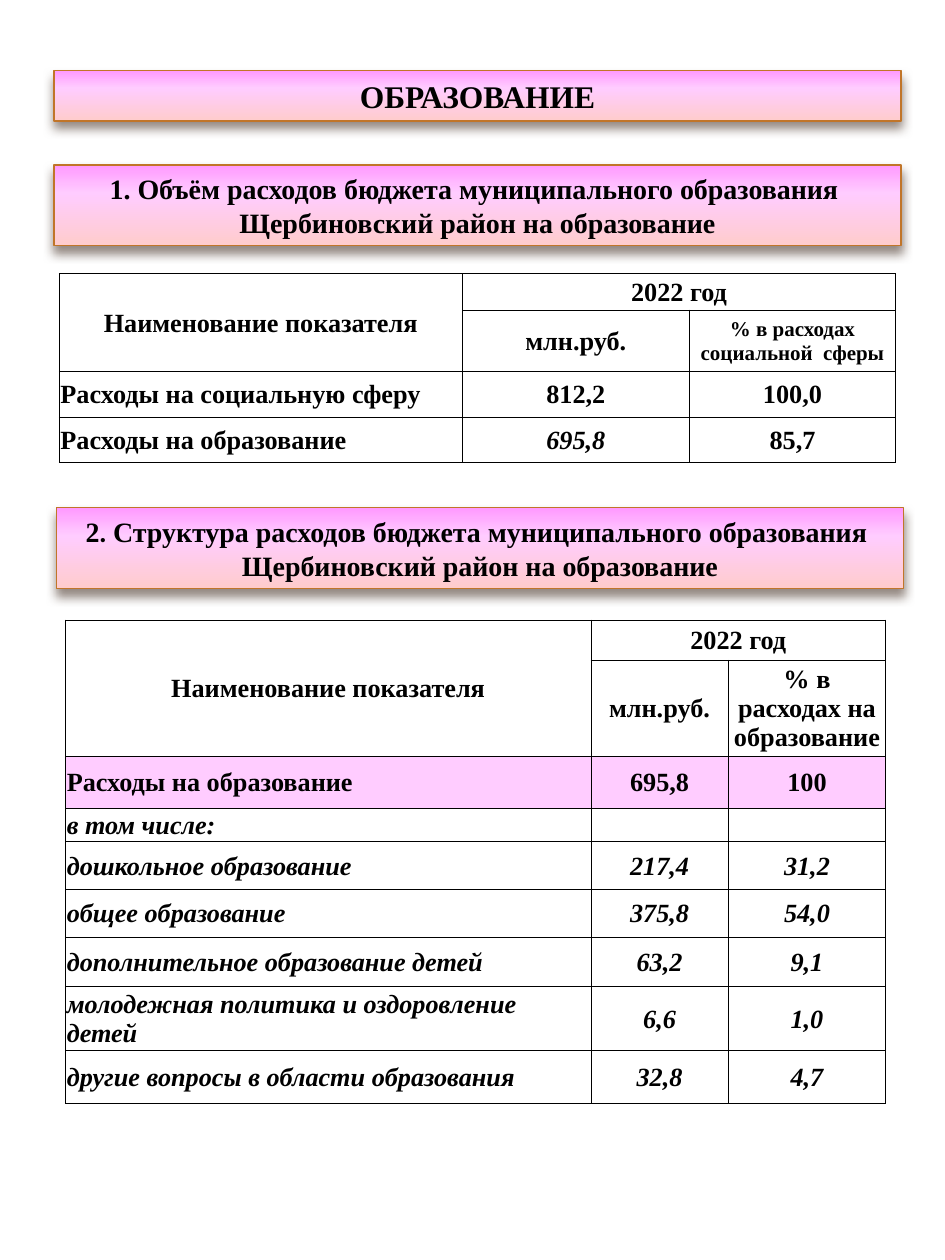
from lxml import etree
from pptx import Presentation
from pptx.dml.color import RGBColor
from pptx.enum.shapes import MSO_SHAPE
from pptx.enum.text import MSO_ANCHOR, MSO_AUTO_SIZE, PP_ALIGN
from pptx.oxml.ns import qn
from pptx.util import Inches, Pt

RECT = MSO_SHAPE.RECTANGLE
MIDDLE = MSO_ANCHOR.MIDDLE
GROW = MSO_AUTO_SIZE.SHAPE_TO_FIT_TEXT
LEFT, CENTER = PP_ALIGN.LEFT, PP_ALIGN.CENTER

SERIF, SANS = "Times New Roman", "Lato"
BLACK, PINK = "000000", "FFCCFF"
STOPS = [(0, "FF99FF"), (35, PINK), (100, "FFCCCC")]
EDGE, SHADE = "C17529", "4E3B30"
BODY = 15
HEAD = "Наименование показателя"
YEAR, UNIT = "2022 год", "млн.руб."
TOTAL = "Расходы на образование"
PLACE = "Щербиновский район на образование"


def color(code):
    return RGBColor.from_string(code)


def node(parent, tag, **attrs):
    return etree.SubElement(parent, qn(tag), {k: str(v) for k, v in attrs.items()})


def add_run(para, text, size, font=SERIF, italic=False):
    run = para.add_run()
    run.text = text
    run.font.name = font
    run.font.size = Pt(size)
    run.font.bold = True
    run.font.italic = italic
    run.font.color.rgb = color(BLACK)


def add_lines(para, lines, size):
    """Write lines of (text, font) runs, with a line break between them."""
    for index, line in enumerate(lines):
        if index:
            para.add_line_break()
        for text, font in line:
            add_run(para, text, size, font)


def shade(shape):
    """Give a shape a soft shadow straight below it."""
    effects = node(shape._element.spPr, "a:effectLst")
    outer = node(effects, "a:outerShdw", blurRad=Pt(6), dist=Pt(4),
                 dir=5400000, rotWithShape=0)
    tint = node(outer, "a:srgbClr", val=SHADE)
    node(tint, "a:alpha", val=60000)


def add_banner(slide, left, top, height, lines, size):
    shape = slide.shapes.add_shape(RECT, Inches(left), Inches(top),
                                   Inches(6.72), Inches(height))
    shape.fill.gradient()
    shape.fill.gradient_angle = 270
    stops = shape._element.spPr.find(".//" + qn("a:gsLst"))
    for old in list(stops):
        stops.remove(old)
    for place, code in STOPS:
        stop = node(stops, "a:gs", pos=place * 1000)
        node(stop, "a:srgbClr", val=code)
    shape.line.color.rgb = color(EDGE)
    shape.line.width = Pt(0.79)
    shade(shape)
    frame = shape.text_frame
    frame.word_wrap = True
    frame.auto_size = GROW
    para = frame.paragraphs[0]
    para.alignment = CENTER
    add_lines(para, lines, size)


def add_edges(cell):
    props = cell._tc.get_or_add_tcPr()
    for index, side in enumerate(("a:lnL", "a:lnR", "a:lnT", "a:lnB")):
        line = node(props, side, w=Pt(0.5))
        fill = node(line, "a:solidFill")
        node(fill, "a:srgbClr", val=BLACK)
        props.insert(index, line)


def fill_cell(cell, text, align, size, italic, fill):
    cell.margin_left = cell.margin_right = cell.margin_top = Inches(0.01)
    cell.margin_bottom = 0
    cell.vertical_anchor = MIDDLE
    if fill:
        cell.fill.solid()
        cell.fill.fore_color.rgb = color(fill)
    else:
        cell.fill.background()
    add_edges(cell)
    para = cell.text_frame.paragraphs[0]
    para.alignment = align
    if not text:
        node(para._p, "a:endParaRPr", sz=BODY * 100)
    for index, line in enumerate(text.split("\n") if text else []):
        if index:
            para.add_line_break()
        add_run(para, line, size, italic=italic)


def add_grid(slide, left, top, cols, heights, rows, slanted, sizes, fills):
    """Add a table; slanted, sizes and fills hold what differs by place."""
    table = slide.shapes.add_table(len(heights), len(cols), Inches(left), Inches(top),
                                   Inches(sum(cols)), Inches(sum(heights))).table
    table.first_row = table.horz_banding = False
    for col, width in zip(table.columns, cols):
        col.width = Inches(width)
    for row, height in zip(table.rows, heights):
        row.height = Inches(height)
    for r, texts in enumerate(rows):
        for c, text in enumerate(texts):
            align = LEFT if r > 1 and c == 0 else CENTER
            fill_cell(table.cell(r, c), text, align, sizes.get((r, c), BODY),
                      (r, c) in slanted, fills.get(r))
    table.cell(0, 0).merge(table.cell(1, 0))
    table.cell(0, 1).merge(table.cell(0, 2))


def main():
    deck = Presentation()
    deck.slide_width, deck.slide_height = Inches(7.5), Inches(10)
    slide = deck.slides.add_slide(deck.slide_layouts[6])

    volume = [
        (HEAD, YEAR, ""),
        ("", UNIT, "% в расходах социальной  сферы"),
        ("Расходы на социальную сферу", "812,2", "100,0"),
        (TOTAL, "695,8", "85,7"),
    ]
    add_grid(slide, 0.47, 2.17, [3.2, 1.8, 1.64], [0.29, 0.49, 0.36, 0.36],
             volume, {(3, 1)}, {(1, 2): 12}, {})

    add_banner(slide, 0.45, 4.03, 0.64, [
        [("2", SERIF), (". ", SANS),
         ("Структура расходов бюджета муниципального образования ", SERIF)],
        [(PLACE, SERIF)],
    ], 16)

    parts = [
        (HEAD, YEAR, ""),
        ("", UNIT, "% в\nрасходах на образование"),
        (TOTAL, "695,8", "100"),
        ("в том числе:", "", ""),
        ("дошкольное образование", "217,4", "31,2"),
        ("общее образование", "375,8", "54,0"),
        ("дополнительное образование детей", "63,2", "9,1"),
        ("молодежная политика и оздоровление детей", "6,6", "1,0"),
        ("другие вопросы в области образования", "32,8", "4,7"),
    ]
    slanted = {(r, c) for r in range(3, len(parts)) for c in range(3)}
    add_grid(slide, 0.52, 4.92, [4.17, 1.09, 1.25],
             [0.32, 0.76, 0.42, 0.26, 0.38, 0.38, 0.39, 0.51, 0.42],
             parts, slanted, {}, {2: PINK})

    add_banner(slide, 0.43, 0.56, 0.4, [[("ОБРАЗОВАНИЕ", SERIF)]], 18)
    add_banner(slide, 0.43, 1.31, 0.64, [
        [("1. Объём расходов бюджета муниципального образования ", SERIF)],
        [(PLACE, SERIF)],
    ], 16)
    deck.save("out.pptx")


if __name__ == "__main__":
    main()
